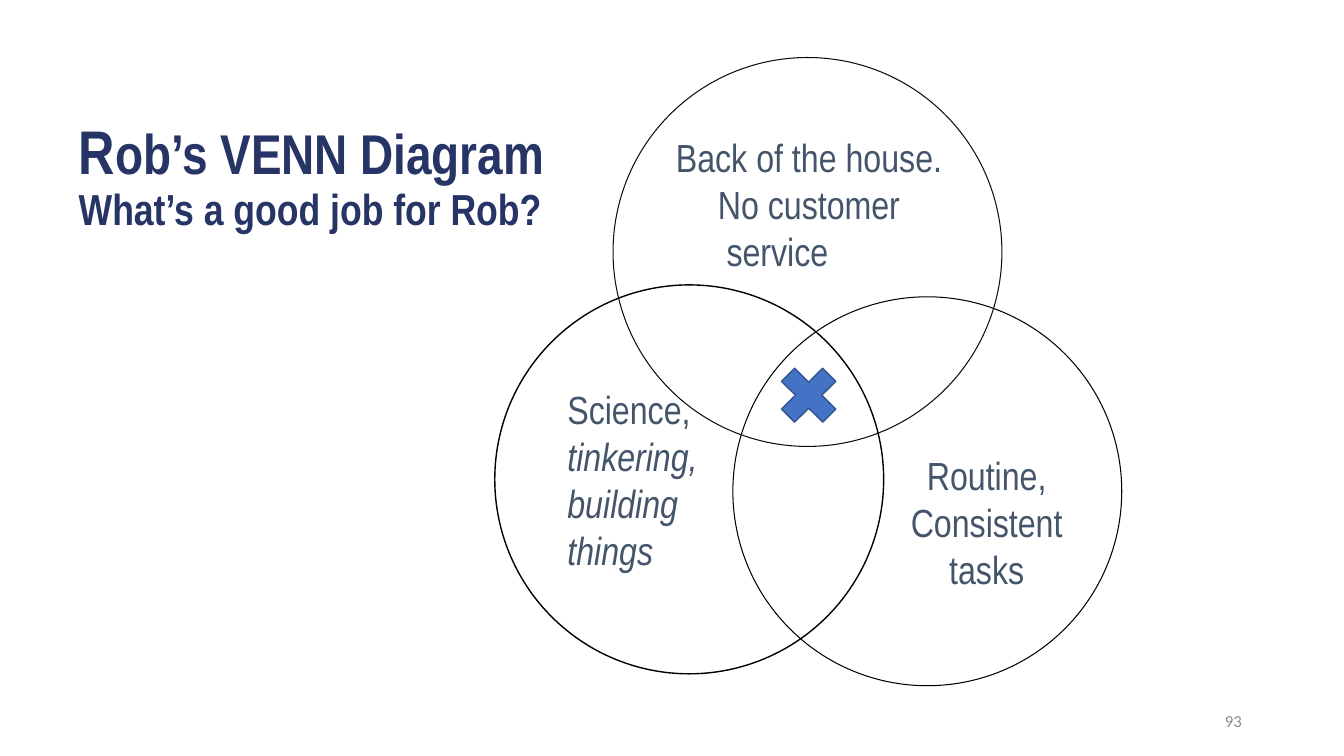
from pptx import Presentation
from pptx.dml.color import RGBColor
from pptx.enum.shapes import MSO_SHAPE as Shape
from pptx.enum.text import MSO_ANCHOR as Anchor, PP_ALIGN as Align
from pptx.util import Cm, Pt

NARROW = "Arial Narrow"
NAVY, SLATE, GREY = "273466", "44546A", "8C8C8C"


def color(hex_code):
    return RGBColor.from_string(hex_code)


def add_run(paragraph, text, **font_format):
    run = paragraph.add_run()
    run.text = text
    for name, value in font_format.items():
        if name == "color":
            run.font.color.rgb = color(value)
        else:
            setattr(run.font, name, value)


def add_label(slide, box, paragraphs, anchor=Anchor.MIDDLE):
    """Each paragraph is (alignment, left margin in cm, [(text, font format)])."""
    frame = slide.shapes.add_textbox(*map(Cm, box)).text_frame
    frame.word_wrap = True
    frame.vertical_anchor = anchor
    for i, (alignment, margin, runs) in enumerate(paragraphs):
        paragraph = frame.add_paragraph() if i else frame.paragraphs[0]
        paragraph.alignment = alignment
        if margin:
            paragraph._p.get_or_add_pPr().set("marL", str(Cm(margin)))
        for text, font_format in runs:
            add_run(paragraph, text, **font_format)


def add_outline(slide, preset, box, line_color, line_width, fill=None):
    outline = slide.shapes.add_shape(preset, *map(Cm, box))
    outline.shadow.inherit = False
    if fill:
        outline.fill.solid()
        outline.fill.fore_color.rgb = color(fill)
    else:
        outline.fill.background()
    outline.line.color.rgb = color(line_color)
    outline.line.width = Pt(line_width)


def add_heading(slide, box):
    title = slide.shapes.title
    for name, value in zip(("left", "top", "width", "height"), box):
        setattr(title, name, Cm(value))
    title.text_frame.vertical_anchor = Anchor.MIDDLE
    heading = title.text_frame.paragraphs[0]
    heading.alignment, heading.line_spacing = Align.LEFT, 0.9
    bold = dict(name=NARROW, color=NAVY, bold=True)
    add_run(heading, "R", size=Pt(44), **bold)
    add_run(heading, "ob’s VENN Diagram", size=Pt(40), **bold)
    heading.add_line_break()
    add_run(heading, "What’s a good job for Rob?", size=Pt(31), **bold)


def add_venn(slide, left, top):
    def place(x, y, width, height):
        return left + x, top + y, width, height

    # Three overlapping circles: place and line of each
    diameter = 9.8
    for x, y, line_color, width in ((2.98, 0, "0D0D0D", 0.75),
                                    (0, 5.73, "000000", 1),
                                    (6, 6.03, "000000", 0.75)):
        add_outline(slide, Shape.OVAL, place(x, y, diameter, diameter),
                    line_color, width)

    # Labels inside the circles
    plain = dict(name=NARROW, size=Pt(28), color=SLATE)
    italic = dict(plain, italic=True)
    add_label(slide, place(3.94, 1.42, 7.95, 4.55), [
        (Align.CENTER, 0, [("Back of the house. No customer", plain)]),
        (Align.LEFT, 1.65, [("service", plain)])])
    add_label(slide, place(1.58, 8.13, 4.4, 5.05), [
        (Align.LEFT, 0, [("Science, ", plain),
                         ("tinkering, building things", italic)])],
              Anchor.TOP)
    add_label(slide, place(9.73, 9.78, 5.33, 3.84), [
        (Align.CENTER, 0, [("Routine, Consistent tasks", plain)])])

    # Cross where all three meet
    add_outline(slide, Shape.MATH_MULTIPLY, place(6.91, 7.52, 2, 1.98),
                "325491", 1, fill="4472C4")


def add_page_number(slide, box):
    add_label(slide, box, [(Align.RIGHT, 0, [
        ("93", dict(name="Calibri", size=Pt(12), color=GREY))])])


def main():
    deck = Presentation()
    deck.slide_width, deck.slide_height = Cm(33.87), Cm(19.05)
    slide = deck.slides.add_slide(deck.slide_layouts[5])
    add_heading(slide, (1.73, 1.52, 15.01, 5.92))
    add_venn(slide, 12.47, 1.45)
    add_page_number(slide, (23.93, 17.65, 7.62, 1.02))
    deck.save("out.pptx")


if __name__ == "__main__":
    main()
